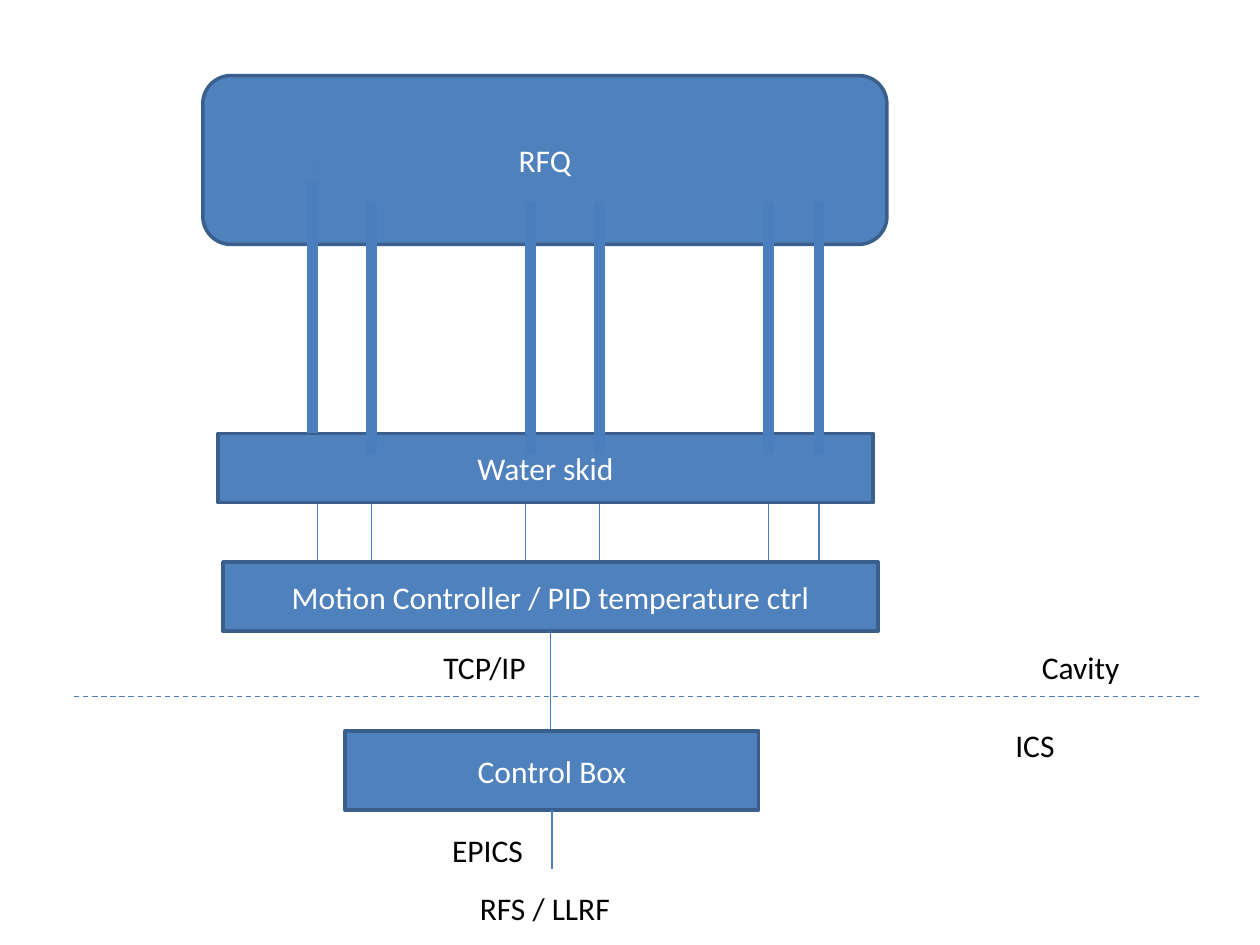
from dataclasses import dataclass

from lxml.etree import SubElement
from pptx import Presentation
from pptx.dml.color import RGBColor
from pptx.enum.dml import MSO_LINE
from pptx.enum.shapes import MSO_CONNECTOR, MSO_SHAPE
from pptx.enum.text import MSO_ANCHOR, MSO_AUTO_SIZE, PP_ALIGN
from pptx.oxml.ns import qn
from pptx.util import Inches, Pt


@dataclass(frozen=True)
class Theme:
    font: str = "Calibri"
    text_size: float = 18
    box_fill: str = "4F81BD"
    box_outline: str = "3A5F8C"
    connector: str = "4B7EBC"
    box_text: str = "FFFFFF"
    label_text: str = "000000"
    outline_width: float = 2
    signal_width: float = 0.75
    pipe_width: float = 6


def write_text(text_frame, text, *, font, size, color, align=PP_ALIGN.LEFT,
               anchor=MSO_ANCHOR.TOP, wrap=True):
    text_frame.word_wrap = wrap
    text_frame.vertical_anchor = anchor
    paragraph = text_frame.paragraphs[0]
    paragraph.alignment = align
    run = paragraph.add_run()
    run.text = text
    run.font.name = font
    run.font.size = Pt(size)
    run.font.color.rgb = RGBColor.from_string(color)


class DiagramSlide:
    def __init__(self, slide, theme):
        self.slide = slide
        self.theme = theme

    def box(self, text, left, top, width, height, kind=MSO_SHAPE.RECTANGLE):
        theme = self.theme
        shape = self.slide.shapes.add_shape(
            kind, Inches(left), Inches(top), Inches(width), Inches(height))
        shape.shadow.inherit = False
        shape.fill.solid()
        shape.fill.fore_color.rgb = RGBColor.from_string(theme.box_fill)
        shape.line.color.rgb = RGBColor.from_string(theme.box_outline)
        shape.line.width = Pt(theme.outline_width)
        write_text(shape.text_frame, text, font=theme.font, size=theme.text_size,
                   color=theme.box_text, align=PP_ALIGN.CENTER, anchor=MSO_ANCHOR.MIDDLE)

    def label(self, text, left, top, width, height=0.4):
        theme = self.theme
        shape = self.slide.shapes.add_textbox(
            Inches(left), Inches(top), Inches(width), Inches(height))
        write_text(shape.text_frame, text, font=theme.font, size=theme.text_size,
                   color=theme.label_text, wrap=False)
        shape.text_frame.auto_size = MSO_AUTO_SIZE.SHAPE_TO_FIT_TEXT

    def line(self, start, end, width, dash=None):
        connector = self.slide.shapes.add_connector(
            MSO_CONNECTOR.STRAIGHT, Inches(start[0]), Inches(start[1]),
            Inches(end[0]), Inches(end[1]))
        connector.line.color.rgb = RGBColor.from_string(self.theme.connector)
        connector.line.width = Pt(width)
        if dash is not None:
            connector.line.dash_style = dash
        SubElement(connector._element.spPr, qn("a:effectLst"))

    def signal(self, x, top, bottom):
        self.line((x, top), (x, bottom), self.theme.signal_width)

    def pipe(self, x, top, length=2):
        self.line((x, top), (x, top + length), self.theme.pipe_width)

    def boundary(self, left, right, y):
        self.line((left, y), (right, y), self.theme.signal_width, MSO_LINE.DASH)


def main():
    presentation = Presentation()
    presentation.slide_width = Inches(10)
    presentation.slide_height = Inches(7.5)
    slide = presentation.slides.add_slide(presentation.slide_layouts.get_by_name("Blank"))
    diagram = DiagramSlide(slide, Theme())

    diagram.box("RFQ", 1.61, 0.6, 5.43, 1.34, MSO_SHAPE.ROUNDED_RECTANGLE)

    controller_top = 4.46
    sensor_lines = [(2.52, 1.27), (4.17, 1.78), (6.1, 1.94),
                    (2.95, 1.55), (4.76, 1.94), (6.5, 1.94)]
    for x, top in sensor_lines:
        diagram.signal(x, top, controller_top)

    diagram.box("Motion Controller / PID temperature ctrl", 1.77, controller_top, 5.2, 0.55)
    diagram.signal(4.37, 5.01, 5.8)
    diagram.box("Control Box", 2.74, 5.8, 3.28, 0.63)
    diagram.boundary(0.59, 9.54, 5.53)
    diagram.signal(4.38, 6.43, 6.9)
    diagram.box("Water skid", 1.73, 3.44, 5.2, 0.55)

    diagram.pipe(2.48, 1.44)
    for x in (2.95, 4.21, 4.76, 6.1, 6.5):
        diagram.pipe(x, 1.6)

    labels = [
        ("Cavity", 8.17, 5.09, 0.82),
        ("TCP/IP", 3.42, 5.09, 0.86),
        ("ICS", 7.96, 5.71, 0.52),
        ("EPICS", 3.49, 6.55, 0.77),
        ("RFS / LLRF", 3.71, 7.01, 1.25),
    ]
    for text, left, top, width in labels:
        diagram.label(text, left, top, width)

    presentation.save("out.pptx")


if __name__ == "__main__":
    main()
